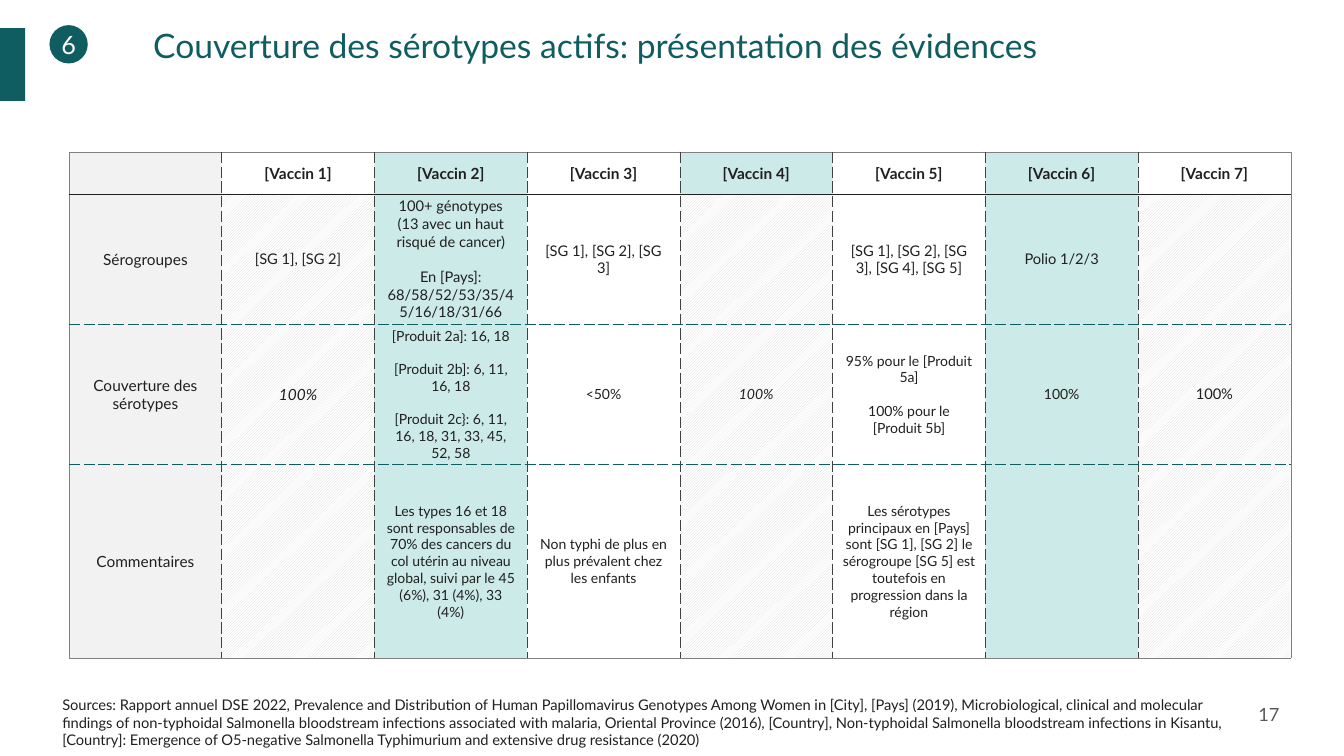
from dataclasses import dataclass

import pptx
import pptx.dml.color
import pptx.enum.dml
import pptx.enum.shapes
import pptx.enum.text
import pptx.oxml
import pptx.oxml.ns
import pptx.shapes.base
import pptx.slide
import pptx.table
import pptx.text.text
import pptx.util

ALIGN = pptx.enum.text.PP_ALIGN
ANCHOR = pptx.enum.text.MSO_ANCHOR
PRESET = pptx.enum.shapes.MSO_SHAPE
SLIDE_WIDTH, SLIDE_HEIGHT = pptx.util.Inches(13.33), pptx.util.Inches(7.5)


@dataclass(frozen=True)
class Theme:
    font: str = "Lato"
    brand: str = "0F5D61"
    ink: str = "202020"
    muted: str = "595959"
    white: str = "FFFFFF"
    label_fill: str = "F2F2F2"
    highlight: str = "009688"
    highlight_opacity: int = 20
    hatch: str = "D9D9D9"
    frame: str = "808080"
    divider: str = "414141"
    title_size: float = 24
    badge_size: float = 18
    number_size: float = 13
    label_size: float = 11
    text_size: float = 10.5
    small_size: float = 10
    line_height: float = 1.2


THEME = Theme()


@dataclass(frozen=True)
class Area:
    """A rectangle in percent of the slide's width and height."""
    left: float
    top: float
    width: float
    height: float

    def emu(self) -> tuple[int, int, int, int]:
        return (across(self.left), down(self.top), across(self.width), down(self.height))


@dataclass(frozen=True)
class Entry:
    """Cell text: blocks are set apart by the height of one line."""
    blocks: tuple[str, ...] = ()
    size: float = THEME.text_size
    bold: bool = False
    italic: bool = False


@dataclass(frozen=True)
class Border:
    color: str
    width: float
    dashed: bool = False


FRAME = Border(THEME.frame, 0.25)
HEADER_RULE = Border(THEME.ink, 0.75)
ROW_RULE = Border(THEME.brand, 0.5, True)
COLUMN_RULE = Border(THEME.divider, 0.5, True)

BAR_AREA = Area(-0.08, 3.73, 1.95, 9.6)
TITLE_AREA = Area(3.9, 3.33, 94.15, 10.67)
BADGE_AREA = Area(3.68, 3.33, 2.85, 5.07)
TABLE_AREA = Area(5.14, 20.13, 90.92, 66.4)
SOURCES_AREA = Area(3.9, 92.93, 89.42, 5.2)
NUMBER_AREA = Area(92.65, 90.67, 6, 7.6)
ROW_HEIGHTS = (5.6, 16.93, 18.27, 25.6)
TITLE_INDENT = 7.5

TITLE = "Couverture des sérotypes actifs: présentation des évidences"
SOURCES = (
    "Sources: Rapport annuel DSE 2022, Prevalence and Distribution of Human Papillomavirus "
    "Genotypes Among Women in [City], [Pays] (2019), Microbiological, clinical and molecular "
    "findings of non-typhoidal Salmonella bloodstream infections associated with malaria, "
    "Oriental Province (2016), [Country], Non-typhoidal Salmonella bloodstream infections in "
    "Kisantu, [Country]: Emergence of O5-negative Salmonella Typhimurium and extensive drug "
    "resistance (2020)")


def label(text: str) -> Entry:
    return Entry((text,), THEME.label_size)


def small(*blocks: str, italic: bool = False) -> Entry:
    return Entry(blocks, THEME.small_size, italic=italic)


EMPTY = Entry()
EVIDENCE = (
    (EMPTY, *(Entry((f"[Vaccin {n}]",), THEME.label_size, bold=True) for n in range(1, 8))),
    (label("Sérogroupes"),
     Entry(("[SG 1], [SG 2]",)),
     Entry(("100+ génotypes\n(13 avec un haut risqué de cancer)",
            "En [Pays]: 68/58/52/53/35/45/16/18/31/66")),
     Entry(("[SG 1], [SG 2], [SG 3]",)),
     EMPTY,
     Entry(("[SG 1], [SG 2], [SG 3], [SG 4], [SG 5]",)),
     Entry(("Polio 1/2/3",)),
     EMPTY),
    (label("Couverture des sérotypes"),
     Entry(("100%",), THEME.label_size, italic=True),
     small("[Produit 2a]: 16, 18", "[Produit 2b]: 6, 11, 16, 18",
           "[Produit 2c}: 6, 11, 16, 18, 31, 33, 45, 52, 58"),
     small("<50%"),
     small("100%", italic=True),
     small("95% pour le [Produit 5a]", "100% pour le [Produit 5b]"),
     small("100%"),
     Entry(("100%",))),
    (label("Commentaires"),
     EMPTY,
     small("Les types 16 et 18 sont responsables de 70% des cancers du col utérin au niveau "
           "global, suivi par le 45 (6%), 31 (4%), 33 (4%)"),
     small("Non typhi de plus en plus prévalent chez les enfants"),
     EMPTY,
     small("Les sérotypes principaux en [Pays] sont [SG 1], [SG 2] le sérogroupe [SG 5] est "
           "toutefois en progression dans la région"),
     EMPTY,
     EMPTY),
)
HATCHED_COLUMNS = (1, 4, 7)
LAST_ROW, LAST_COLUMN = len(EVIDENCE) - 1, len(EVIDENCE[0]) - 1


def across(percent: float) -> int:
    return round(SLIDE_WIDTH * percent / 100)


def down(percent: float) -> int:
    return round(SLIDE_HEIGHT * percent / 100)


def rgb(color: str) -> pptx.dml.color.RGBColor:
    return pptx.dml.color.RGBColor.from_string(color)


def write(frame: pptx.text.text.TextFrame, text: str, size: float, color: str,
          align: ALIGN = ALIGN.LEFT, anchor: ANCHOR = ANCHOR.MIDDLE,
          bold: bool = False, italic: bool = False) -> None:
    frame.text = text
    frame.word_wrap = True
    frame.vertical_anchor = anchor
    for paragraph in frame.paragraphs:
        paragraph.alignment = align
        for run in paragraph.runs:
            font = run.font
            font.name, font.size, font.color.rgb = THEME.font, pptx.util.Pt(size), rgb(color)
            font.bold, font.italic = bold, italic


def add_brand_shape(slide: pptx.slide.Slide, preset: PRESET,
                    area: Area) -> pptx.shapes.base.BaseShape:
    shape = slide.shapes.add_shape(preset, *area.emu())
    shape.shadow.inherit = False
    shape.fill.solid()
    shape.fill.fore_color.rgb = rgb(THEME.brand)
    shape.line.fill.background()
    return shape


def fill_cell(cell: pptx.table._Cell, row: int, column: int) -> None:
    if row and column in HATCHED_COLUMNS:
        cell.fill.patterned()
        cell.fill.pattern = pptx.enum.dml.MSO_PATTERN.DARK_UPWARD_DIAGONAL
        cell.fill.fore_color.rgb, cell.fill.back_color.rgb = rgb(THEME.hatch), rgb(THEME.white)
        return
    highlighted = column > 0 and column % 2 == 0
    plain = THEME.white if column else THEME.label_fill
    cell.fill.solid()
    cell.fill.fore_color.rgb = rgb(THEME.highlight if highlighted else plain)
    if highlighted:
        tint = cell._tc.tcPr.find(".//" + pptx.oxml.ns.qn("a:srgbClr"))
        tint.append(pptx.oxml.parse_xml(
            f'<a:alpha {pptx.oxml.ns.nsdecls("a")} val="{THEME.highlight_opacity * 1000}"/>'))


def border_cell(cell: pptx.table._Cell, row: int, column: int) -> None:
    rules = (FRAME, HEADER_RULE, *[ROW_RULE] * (LAST_ROW - 1), FRAME)
    sides = {"lnL": COLUMN_RULE if column else FRAME,
             "lnR": COLUMN_RULE if column < LAST_COLUMN else FRAME,
             "lnT": rules[row], "lnB": rules[row + 1]}
    for place, (side, border) in enumerate(sides.items()):
        dash = "sysDash" if border.dashed else "solid"
        cell._tc.tcPr.insert(place, pptx.oxml.parse_xml(
            f'<a:{side} {pptx.oxml.ns.nsdecls("a")} w="{pptx.util.Pt(border.width)}">'
            f'<a:solidFill><a:srgbClr val="{border.color}"/></a:solidFill>'
            f'<a:prstDash val="{dash}"/></a:{side}>'))


def write_cell(cell: pptx.table._Cell, entry: Entry) -> None:
    cell.margin_left = cell.margin_right = pptx.util.Inches(0.1)
    cell.margin_top = cell.margin_bottom = pptx.util.Inches(0.03)
    cell.vertical_anchor = ANCHOR.MIDDLE
    frame, start = cell.text_frame, 0
    frame.text = "\n".join(entry.blocks)
    for paragraph in frame.paragraphs:
        paragraph.alignment = ALIGN.CENTER
        for run in paragraph.runs:
            font = run.font
            font.name, font.size = THEME.font, pptx.util.Pt(entry.size)
            font.color.rgb = rgb(THEME.ink)
            font.bold, font.italic = entry.bold, entry.italic
    for block in entry.blocks[:-1]:
        start += len(block.split("\n"))
        frame.paragraphs[start].space_before = pptx.util.Pt(entry.size * THEME.line_height)


def add_evidence_table(slide: pptx.slide.Slide) -> None:
    evidence = slide.shapes.add_table(LAST_ROW + 1, LAST_COLUMN + 1, *TABLE_AREA.emu()).table
    evidence.first_row = evidence.horz_banding = False
    for column in evidence.columns:
        column.width = across(TABLE_AREA.width / (LAST_COLUMN + 1))
    for row, entries in enumerate(EVIDENCE):
        evidence.rows[row].height = down(ROW_HEIGHTS[row])
        for column, entry in enumerate(entries):
            cell = evidence.cell(row, column)
            write_cell(cell, entry)
            fill_cell(cell, row, column)
            border_cell(cell, row, column)


def main() -> None:
    deck = pptx.Presentation()
    deck.slide_width, deck.slide_height = SLIDE_WIDTH, SLIDE_HEIGHT
    slide = deck.slides.add_slide(deck.slide_layouts[5])

    # Heading with side bar and numbered badge
    add_brand_shape(slide, PRESET.RECTANGLE, BAR_AREA)
    heading = slide.shapes.title
    heading.left, heading.top, heading.width, heading.height = TITLE_AREA.emu()
    write(heading.text_frame, TITLE, THEME.title_size, THEME.brand, anchor=ANCHOR.TOP)
    heading.text_frame.auto_size = pptx.enum.text.MSO_AUTO_SIZE.NONE
    heading.text_frame.margin_left = across(TITLE_INDENT)
    heading.text_frame.margin_top = heading.text_frame.margin_right = 0
    heading.text_frame.margin_bottom = 0
    badge = add_brand_shape(slide, PRESET.OVAL, BADGE_AREA)
    write(badge.text_frame, "6", THEME.badge_size, THEME.white, ALIGN.CENTER)
    badge.text_frame.word_wrap = False

    # Evidence by vaccine
    add_evidence_table(slide)

    # Sources and page number
    sources = slide.shapes.add_textbox(*SOURCES_AREA.emu())
    write(sources.text_frame, SOURCES, THEME.text_size, THEME.ink)
    page = slide.shapes.add_textbox(*NUMBER_AREA.emu())
    write(page.text_frame, "17", THEME.number_size, THEME.muted)
    page.text_frame.margin_left = page.text_frame.margin_right = pptx.util.Inches(0.13)

    deck.save("out.pptx")


if __name__ == "__main__":
    main()
